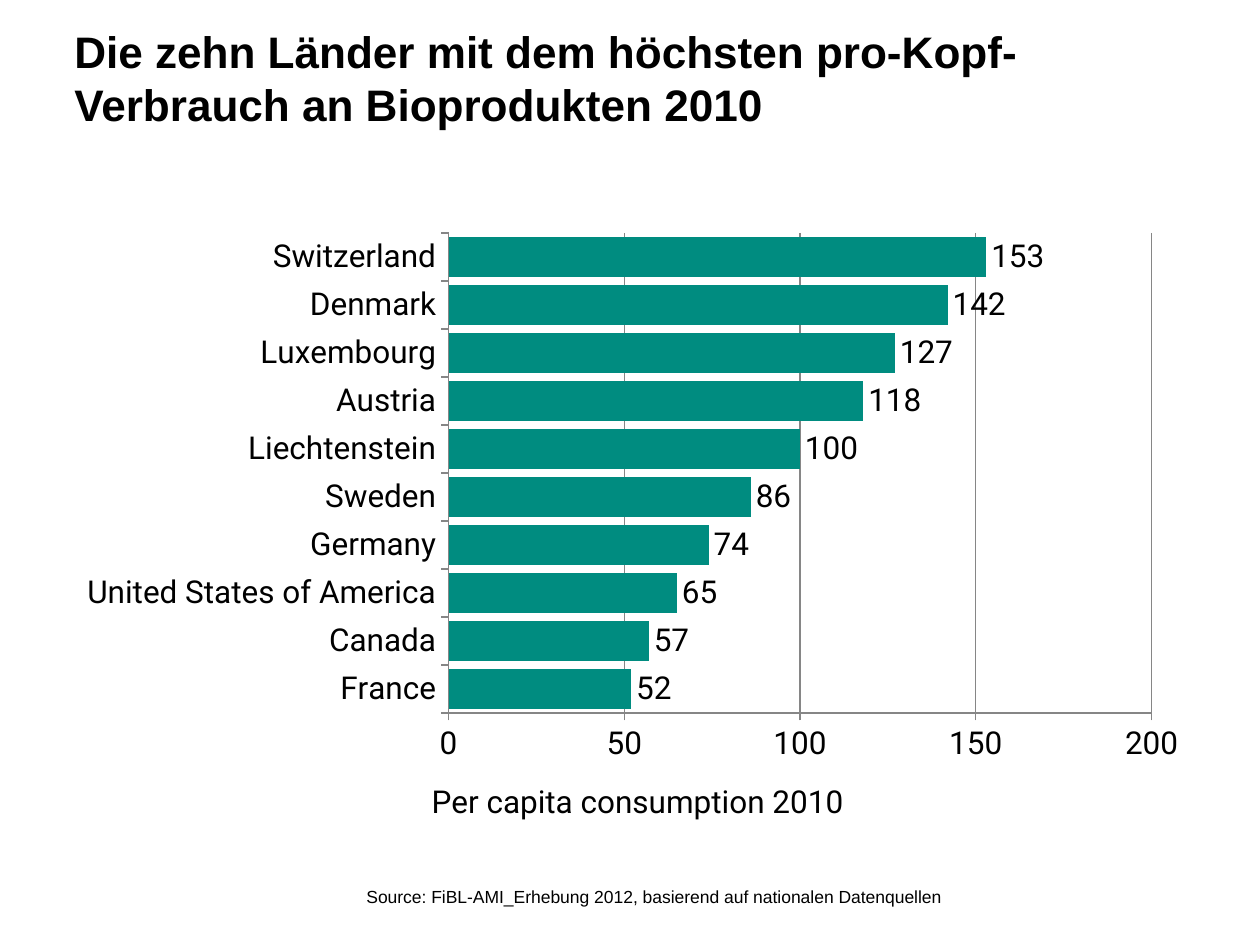
from dataclasses import dataclass

import pptx
import pptx.chart.data
import pptx.dml.color
import pptx.enum.chart
import pptx.enum.text
import pptx.oxml
import pptx.oxml.ns
import pptx.util
from pptx.util import Inches

BLACK, TEAL, GREY = "000000", "008C80", "868686"


@dataclass
class Label:
    text: str
    left: float
    top: float
    width: float
    height: float
    size: float
    bold: bool
    insets: tuple[float, float, float, float]
    anchor: pptx.enum.text.MSO_ANCHOR


@dataclass
class Consumption:
    country: str
    value: int


LABELS = [
    Label("Die zehn Länder mit dem höchsten pro-Kopf-Verbrauch an Bioprodukten 2010",
          0.59, 0.25, 9.02, 0.78, 25.2, True, (0, 0, 0.1, 0.05),
          pptx.enum.text.MSO_ANCHOR.MIDDLE),
    Label("Source: FiBL-AMI_Erhebung 2012, basierend auf nationalen Datenquellen",
          2.81, 6.98, 5.83, 0.27, 10, False, (0.1, 0.05, 0.1, 0.05),
          pptx.enum.text.MSO_ANCHOR.TOP),
]

# Lowest bar first
RANKING = [
    Consumption("France", 52),
    Consumption("Canada", 57),
    Consumption("United States of America", 65),
    Consumption("Germany", 74),
    Consumption("Sweden", 86),
    Consumption("Liechtenstein", 100),
    Consumption("Austria", 118),
    Consumption("Luxembourg", 127),
    Consumption("Denmark", 142),
    Consumption("Switzerland", 153),
]


def rgb(color: str) -> pptx.dml.color.RGBColor:
    return pptx.dml.color.RGBColor.from_string(color)


def set_font(font, name: str, size: float, bold: bool = False) -> None:
    font.name, font.size, font.bold = name, pptx.util.Pt(size), bold
    font.color.rgb = rgb(BLACK)


def set_line(line) -> None:
    line.color.rgb = rgb(GREY)
    line.width = pptx.util.Pt(0.75)


def manual_layout(inner: bool = False, **fractions: float):
    """Return a c:layout placed by fractions of the chart area."""
    target = '<c:layoutTarget val="inner"/>' if inner else ""
    modes = '<c:xMode val="edge"/><c:yMode val="edge"/>'
    values = "".join(f'<c:{key} val="{val}"/>' for key, val in fractions.items())
    return pptx.oxml.parse_xml(
        f'<c:layout {pptx.oxml.ns.nsdecls("c")}><c:manualLayout>'
        f"{target}{modes}{values}</c:manualLayout></c:layout>")


def replace_layout(parent, layout, index: int) -> None:
    for old in parent.findall(pptx.oxml.ns.qn("c:layout")):
        parent.remove(old)
    parent.insert(index, layout)


def add_label(s, label: Label) -> None:
    sp = s.shapes.add_textbox(Inches(label.left), Inches(label.top),
                              Inches(label.width), Inches(label.height))
    tf = sp.text_frame
    tf.word_wrap = True
    tf.vertical_anchor = label.anchor
    (tf.margin_left, tf.margin_top,
     tf.margin_right, tf.margin_bottom) = map(Inches, label.insets)
    tf.text = label.text
    set_font(tf.paragraphs[0].runs[0].font, "Arial", label.size, label.bold)


def add_ranking_chart(s, ranking: list[Consumption]) -> None:
    data = pptx.chart.data.CategoryChartData(number_format="#,##0")
    data.categories = [row.country for row in ranking]
    data.add_series("Series 1", [row.value for row in ranking])
    chart = s.shapes.add_chart(
        pptx.enum.chart.XL_CHART_TYPE.BAR_CLUSTERED,
        Inches(0.5), Inches(1.75), Inches(9), Inches(4.95), data).chart
    chart.has_legend = chart.has_title = False
    set_font(chart.font, "Roboto", 18)

    # Bars and value labels
    plot = chart.plots[0]
    plot.gap_width = 20
    plot.vary_by_categories = False
    fill = plot.series[0].format.fill
    fill.solid()
    fill.fore_color.rgb = rgb(TEAL)
    plot.has_data_labels = True
    labels = plot.data_labels
    labels.show_value = True
    labels.position = pptx.enum.chart.XL_LABEL_POSITION.OUTSIDE_END
    labels.number_format, labels.number_format_is_linked = "#,##0", False
    set_font(labels.font, "Roboto", 18)

    # Axes
    cat, val = chart.category_axis, chart.value_axis
    for axis in (cat, val):
        axis.major_tick_mark = pptx.enum.chart.XL_TICK_MARK.OUTSIDE
        set_line(axis.format.line)
        set_font(axis.tick_labels.font, "Roboto", 18)
    val.minimum_scale, val.maximum_scale, val.major_unit = 0, 200, 50
    val.tick_labels.number_format = "#,##0"
    val.tick_labels.number_format_is_linked = False
    val.has_major_gridlines = True
    set_line(val.major_gridlines.format.line)

    # Axis title, centred on the whole chart
    title = val.axis_title
    title.text_frame.text = "Per capita consumption 2010"
    set_font(title.text_frame.paragraphs[0].runs[0].font, "Roboto", 18)
    replace_layout(title._element, manual_layout(x=0.32, y=0.89), 1)
    replace_layout(plot._element.getparent(),
                   manual_layout(True, x=0.34, y=0.02, w=0.62, h=0.77), 0)


def main() -> None:
    prs = pptx.Presentation()
    prs.slide_width, prs.slide_height = Inches(10), Inches(7.5)
    s = prs.slides.add_slide(prs.slide_layouts[6])
    add_ranking_chart(s, RANKING)
    for label in LABELS:
        add_label(s, label)
    prs.save("out.pptx")


if __name__ == "__main__":
    main()
